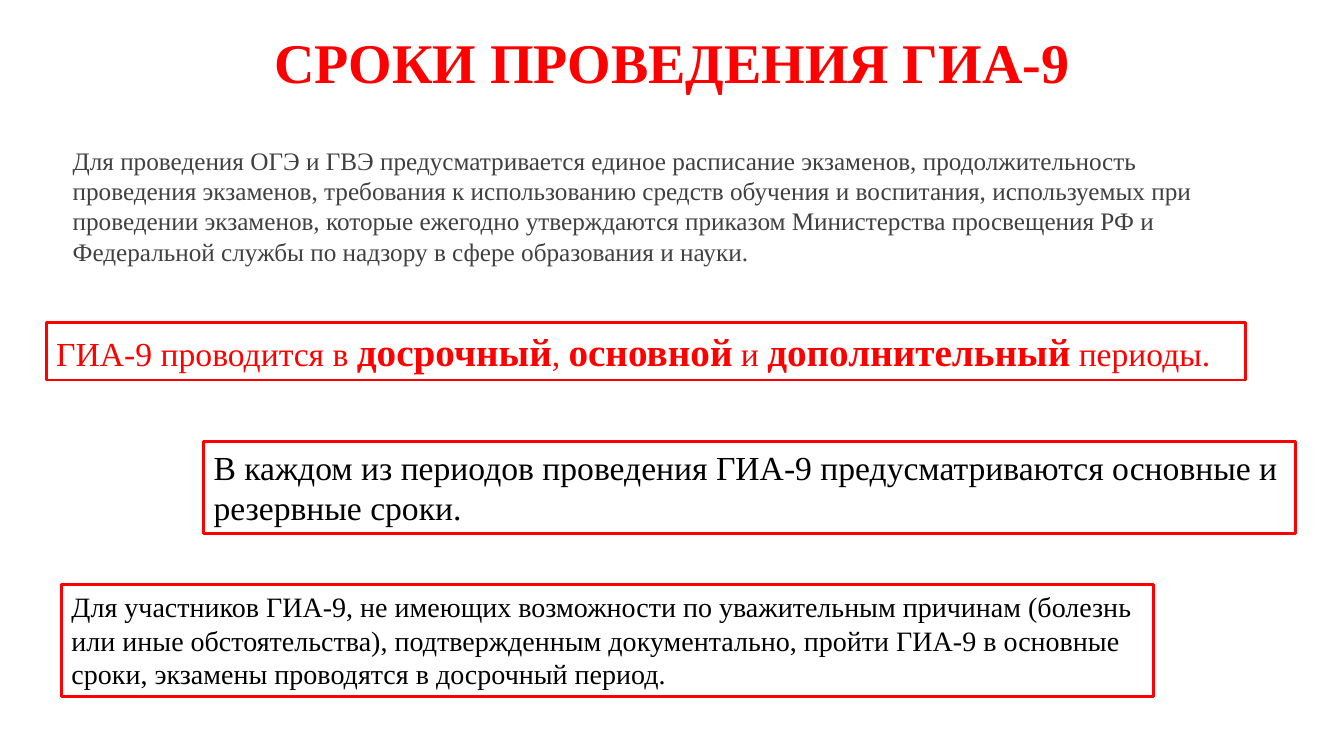
from dataclasses import dataclass

from pptx import Presentation
from pptx.dml.color import RGBColor
from pptx.enum.shapes import MSO_SHAPE as Shape
from pptx.enum.text import MSO_ANCHOR as Anchor, MSO_AUTO_SIZE as AutoSize, PP_ALIGN as Align
from pptx.oxml.xmlchemy import OxmlElement
from pptx.util import Inches, Pt


@dataclass(frozen=True)
class Theme:
    font: str = "Times New Roman"
    accent: RGBColor = RGBColor(255, 0, 0)
    muted: RGBColor = RGBColor(64, 64, 64)
    text: RGBColor = RGBColor(0, 0, 0)
    paper: RGBColor = RGBColor(255, 255, 255)
    title: int = 40
    strong: int = 28
    lead: int = 24
    note: int = 20
    body: int = 18
    border: int = 2


class SlideBuilder:
    """Adds styled elements to one slide, placed by percentages of its size."""

    def __init__(self, presentation, theme):
        self.theme = theme
        self.width = presentation.slide_width
        self.height = presentation.slide_height
        self.slide = presentation.slides.add_slide(presentation.slide_layouts[1])

    def area(self, left, top, width, height):
        return (round(self.width * left / 100), round(self.height * top / 100),
                round(self.width * width / 100), round(self.height * height / 100))

    def place(self, shape, area):
        shape.left, shape.top, shape.width, shape.height = self.area(*area)

    def set_text(self, shape, parts, size, color, align=Align.LEFT, bold=False):
        frame = shape.text_frame
        frame.word_wrap = True
        paragraph = frame.paragraphs[0]
        paragraph.alignment = align
        paragraph.space_before = Pt(0)
        for index, part in enumerate(parts):
            run = paragraph.add_run()
            run.text = part
            if index % 2:
                run.font.size = Pt(self.theme.strong)
                run.font.bold = True
        font = paragraph.font
        font.name, font.size, font.bold = self.theme.font, Pt(size), bold
        font.color.rgb = color
        return frame

    def title(self, text, area):
        shape = self.slide.shapes.title
        self.place(shape, area)
        frame = self.set_text(
            shape, [text], self.theme.title, self.theme.accent, Align.CENTER, True)
        frame.vertical_anchor = Anchor.MIDDLE

    def body(self, text, area):
        shape = self.slide.placeholders[1]
        self.place(shape, area)
        properties = shape.text_frame.paragraphs[0]._p.get_or_add_pPr()
        properties.set("marL", "0")
        properties.set("indent", "0")
        properties.append(OxmlElement("a:buNone"))
        frame = self.set_text(shape, [text], self.theme.body, self.theme.muted)
        frame.margin_left = Inches(0.43)
        frame.vertical_anchor = Anchor.TOP

    def framed(self, parts, area, size, color):
        shape = self.slide.shapes.add_shape(Shape.RECTANGLE, *self.area(*area))
        shape.shadow.inherit = False
        shape.fill.solid()
        shape.fill.fore_color.rgb = self.theme.paper
        shape.line.color.rgb = self.theme.accent
        shape.line.width = Pt(self.theme.border)
        frame = self.set_text(shape, parts, size, color)
        frame.vertical_anchor = Anchor.TOP
        frame.auto_size = AutoSize.SHAPE_TO_FIT_TEXT


def main():
    presentation = Presentation()
    presentation.slide_width, presentation.slide_height = Inches(13.33), Inches(7.5)
    theme = Theme()
    builder = SlideBuilder(presentation, theme)
    builder.title("СРОКИ ПРОВЕДЕНИЯ ГИА-9", (0, 0.27, 100, 15.6))
    builder.body(
        "Для проведения ОГЭ и ГВЭ предусматривается единое расписание экзаменов, "
        "продолжительность проведения экзаменов, требования к использованию средств "
        "обучения и воспитания, используемых при проведении экзаменов, которые ежегодно "
        "утверждаются приказом Министерства просвещения РФ и Федеральной службы по надзору "
        "в сфере образования и науки.",
        (2.18, 18.53, 91.82, 18.93))
    builder.framed(
        ["ГИА-9 проводится в ", "досрочный", ", ", "основной", " и ", "дополнительный",
         " периоды."],
        (3.45, 42.67, 89.2, 7.6), theme.lead, theme.accent)
    builder.framed(
        ["В каждом из периодов проведения ГИА-9 предусматриваются основные и резервные сроки."],
        (15.15, 58.4, 81.25, 12.13), theme.lead, theme.text)
    builder.framed(
        ["Для участников ГИА-9, не имеющих возможности по уважительным причинам (болезнь "
         "или иные обстоятельства), подтвержденным документально, пройти ГИА-9 в основные "
         "сроки, экзамены проводятся в досрочный период."],
        (4.58, 77.33, 81.25, 14.8), theme.note, theme.text)
    presentation.save("out.pptx")


if __name__ == "__main__":
    main()
